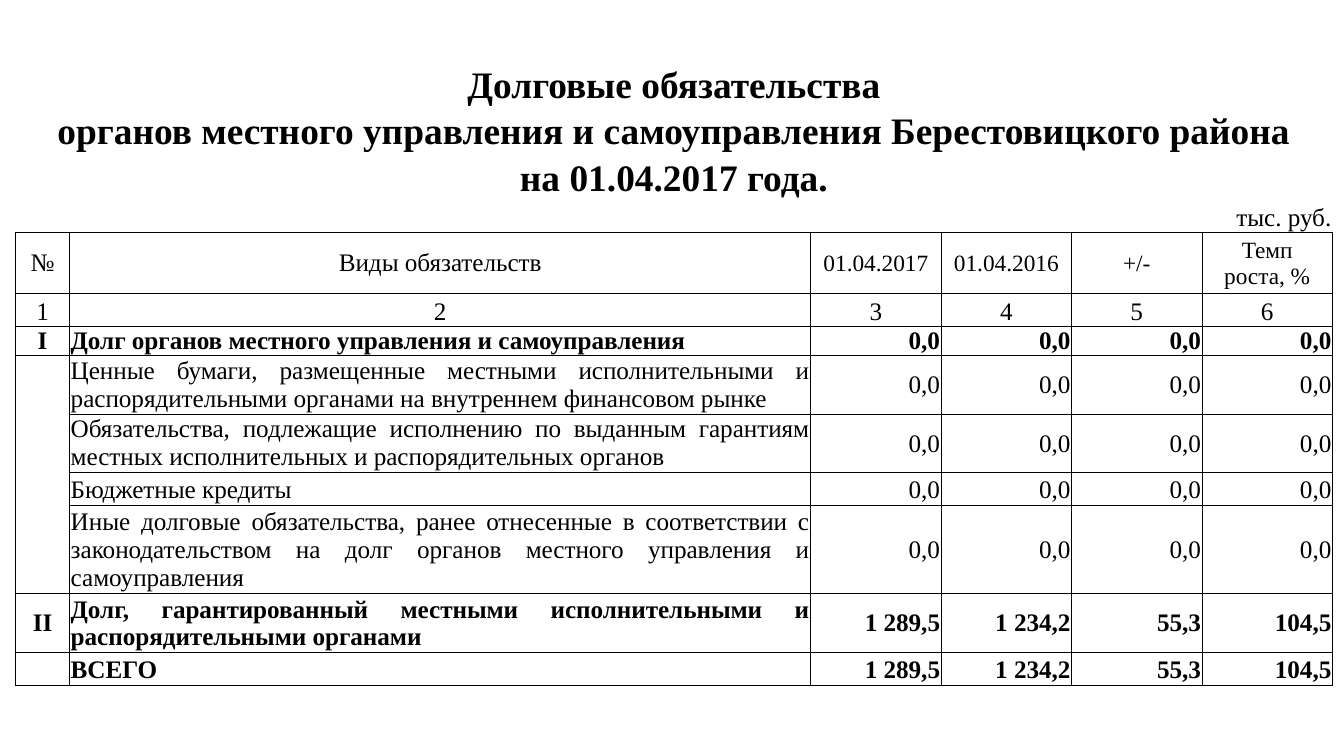
from lxml import etree
from pptx import Presentation
from pptx.dml.color import RGBColor
from pptx.enum.text import MSO_ANCHOR, PP_ALIGN
from pptx.oxml.ns import qn
from pptx.util import Pt

LEFT, CENTER, RIGHT, JUSTIFY = PP_ALIGN.LEFT, PP_ALIGN.CENTER, PP_ALIGN.RIGHT, PP_ALIGN.JUSTIFY
TOP, MIDDLE, BOTTOM = MSO_ANCHOR.TOP, MSO_ANCHOR.MIDDLE, MSO_ANCHOR.BOTTOM
COLORS = {"ink": "000000", "paper": "FFFFFF"}
FONT = "Times New Roman"
TITLE_SIZE, BODY_SIZE, HEAD_SIZE = 20, 13.5, 12.5


def add_border(cell, side, visible):
    line = etree.SubElement(cell._tc.get_or_add_tcPr(), qn(f"a:ln{side}"), w=str(Pt(0.5)))
    if visible:
        fill = etree.SubElement(line, qn("a:solidFill"))
        etree.SubElement(fill, qn("a:srgbClr"), val=COLORS["ink"])
    else:
        etree.SubElement(line, qn("a:noFill"))


def write_cell(cell, text, size, bold, align, anchor):
    cell.margin_left = cell.margin_right = cell.margin_top = Pt(0.6)
    cell.margin_bottom = Pt(0)
    cell.vertical_anchor = anchor
    cell.text_frame.text = text
    for para in cell.text_frame.paragraphs:
        para.alignment = align
        for span in para.runs:
            span.font.name = FONT
            span.font.size = Pt(size)
            span.font.bold = bold
            span.font.color.rgb = RGBColor.from_string(COLORS["ink"])
        if not para.runs:
            etree.SubElement(para._p, qn("a:endParaRPr"), sz=str(int(size * 100)))


headings = [
    "Долговые обязательства",
    "органов местного управления и самоуправления Берестовицкого района",
    "на 01.04.2017 года.",
    "тыс. руб.",
]
zeros = ["0,0"] * 4
totals = ["1 289,5", "1 234,2", "55,3", "104,5"]
rows = [[heading] + [""] * 5 for heading in headings] + [
    ["№", "Виды обязательств", "01.04.2017", "01.04.2016", "+/-", "Темп\nроста, %"],
    ["1", "2", "3", "4", "5", "6"],
    ["I", "Долг органов местного управления и самоуправления"] + zeros,
    ["", "Ценные бумаги, размещенные местными исполнительными и распорядительными "
     "органами на внутреннем финансовом рынке"] + zeros,
    ["", "Обязательства, подлежащие исполнению по выданным гарантиям местных "
     "исполнительных и распорядительных органов"] + zeros,
    ["", "Бюджетные кредиты"] + zeros,
    ["", "Иные долговые обязательства, ранее отнесенные в соответствии с "
     "законодательством на долг органов местного управления и самоуправления"] + zeros,
    ["II", "Долг, гарантированный местными исполнительными и распорядительными органами"] + totals,
    ["", "ВСЕГО"] + totals,
]
heights = [24.8, 24.8, 24.8, 17.7, 32.7, 17.7, 15.5, 31.6, 31.4, 17.7, 47, 31.6, 17.9]
widths = [29, 397] + [69.9] * 4
UNITS, HEAD, NUMBERS, FIRST_ITEM, GUARANTEES, LAST_ITEM, TOTAL = 3, 4, 5, 7, 8, 10, 12
BOLD_ROWS = {0, 1, 2, 6, 11, 12}

deck = Presentation()
deck.slide_width, deck.slide_height = Pt(720), Pt(405)
page = deck.slides.add_slide(deck.slide_layouts[6])
table = page.shapes.add_table(
    len(rows), len(widths), Pt(8.3), Pt(32.4), Pt(sum(widths)), Pt(sum(heights))
).table
table.first_row = table.horz_banding = False
for column, width in zip(table.columns, widths):
    column.width = Pt(width)
for row, height in zip(table.rows, heights):
    row.height = Pt(height)

for r, texts in enumerate(rows):
    for c, text in enumerate(texts):
        cell = table.cell(r, c)
        size, align, anchor = BODY_SIZE, RIGHT, MIDDLE
        if r < UNITS:
            size = TITLE_SIZE
        elif r == HEAD and c > 1:
            size = HEAD_SIZE
        if r != UNITS and (r <= NUMBERS or c == 0):
            align = CENTER
        elif r > NUMBERS and c == 1:
            align = LEFT if r == TOTAL else JUSTIFY
        if r <= UNITS or r == NUMBERS:
            anchor = BOTTOM
        elif r == GUARANTEES and c == 1:
            anchor = TOP
        write_cell(cell, text, size, r in BOLD_ROWS, align, anchor)

        item_number = c == 0 and FIRST_ITEM <= r <= LAST_ITEM
        boxed = r >= HEAD
        add_border(cell, "L", boxed)
        add_border(cell, "R", boxed)
        add_border(cell, "T", boxed and not (item_number and r > FIRST_ITEM))
        add_border(cell, "B", r >= UNITS and not (item_number and r < LAST_ITEM))
        cell.fill.solid()
        cell.fill.fore_color.rgb = RGBColor.from_string(COLORS["paper"])

for r in range(len(headings)):
    table.cell(r, 0).merge(table.cell(r, len(widths) - 1))

deck.save("out.pptx")
